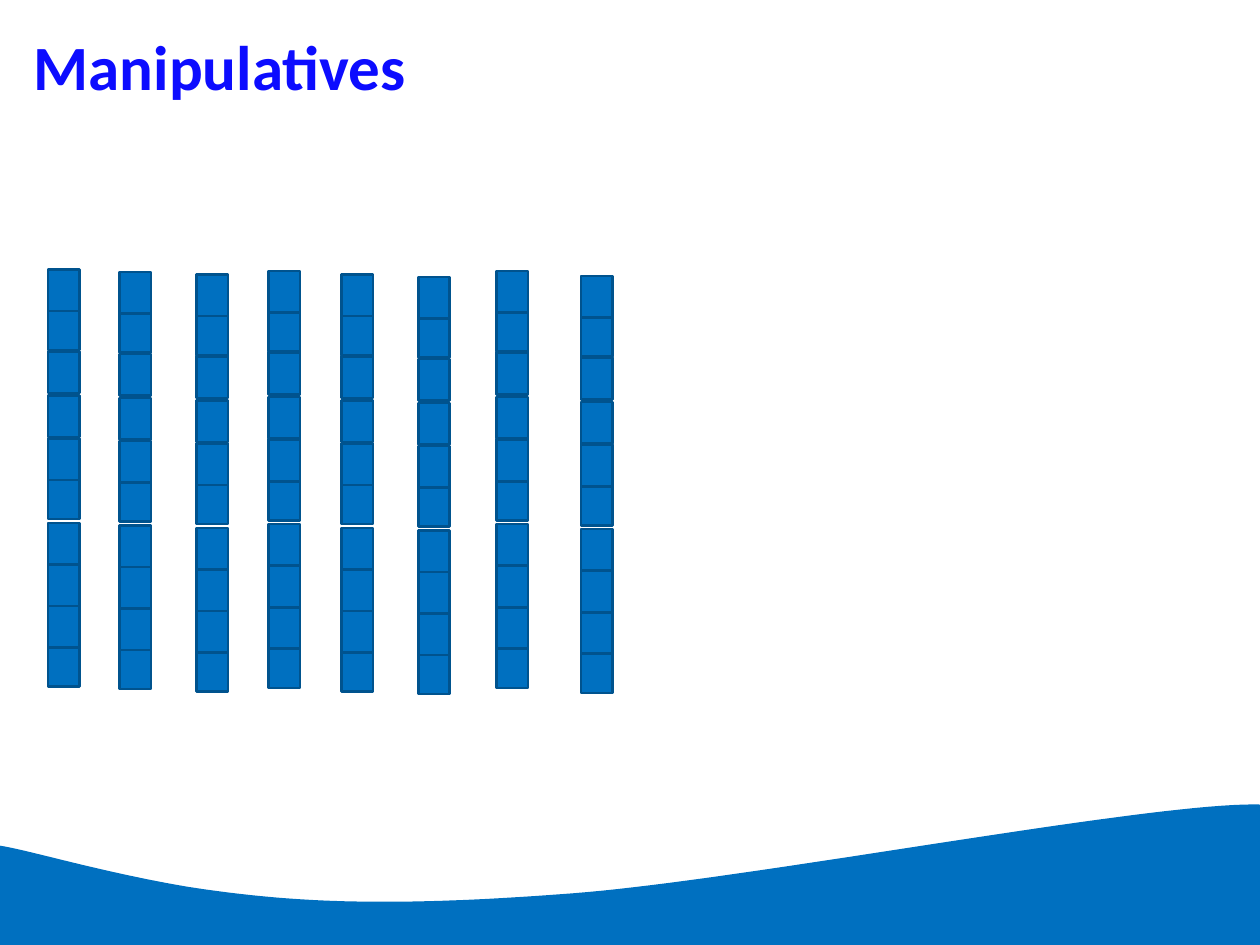
import pptx
import pptx.dml.color
import pptx.enum.shapes
import pptx.enum.text
import pptx.util

Inches = pptx.util.Inches
RGBColor = pptx.dml.color.RGBColor

BLUE = RGBColor(0x00, 0x70, 0xC0)
DARK_BLUE = RGBColor(0x00, 0x53, 0x8E)
TITLE_BLUE = RGBColor(0x0C, 0x0C, 0xFF)

TITLE = "Manipulatives"
# Left and top of each rod of ten cubes
RODS = [(0.38, 2.14), (0.95, 2.16), (1.56, 2.18), (2.13, 2.15),
        (2.71, 2.18), (3.32, 2.20), (3.94, 2.15), (4.61, 2.19)]
# Cube tops below the top of the rod
CUBE_OFFSETS = [0, 0.31, 0.65, 1.0, 1.34, 1.65, 2.01, 2.34, 2.67, 2.98]
CUBE_WIDTH, CUBE_HEIGHT = 0.25, 0.33

WAVE_START = (10.08, 6.39)
# Two control points and an end point for each curve of the crest
WAVE_CURVES = [
    [(9.36, 6.32), (5.98, 6.98), (4.55, 7.09)],
    [(3.12, 7.20), (2.34, 7.17), (1.50, 7.04)],
    [(0.66, 6.90), (-0.08, 6.65), (-0.08, 6.72)],
]
WAVE_BASE = [(-0.08, 7.52), (10.08, 7.55)]
CURVE_STEPS = 40


def bezier_point(points, t):
    weights = ((1 - t) ** 3, 3 * t * (1 - t) ** 2, 3 * t ** 2 * (1 - t), t ** 3)
    return tuple(sum(weight * point[axis] for weight, point in zip(weights, points))
                 for axis in (0, 1))


def add_wave(slide):
    outline = [WAVE_START]
    for curve in WAVE_CURVES:
        points = [outline[-1], *curve]
        outline += [bezier_point(points, step / CURVE_STEPS)
                    for step in range(1, CURVE_STEPS + 1)]
    outline += WAVE_BASE
    vertices = [(Inches(x), Inches(y)) for x, y in outline]
    builder = slide.shapes.build_freeform(*vertices[0])
    builder.add_line_segments(vertices[1:], close=True)
    wave = builder.convert_to_shape()
    wave.shadow.inherit = False
    wave.fill.solid()
    wave.fill.fore_color.rgb = BLUE
    wave.line.fill.background()


def add_title(slide):
    box = slide.shapes.add_textbox(Inches(0.17), Inches(0.17), Inches(9), Inches(0.7))
    frame = box.text_frame
    frame.word_wrap = True
    frame.vertical_anchor = pptx.enum.text.MSO_ANCHOR.MIDDLE
    run = frame.paragraphs[0].add_run()
    run.text = TITLE
    run.font.name = "Calibri"
    run.font.size = pptx.util.Pt(36)
    run.font.bold = True
    run.font.color.rgb = TITLE_BLUE


def add_rod(slide, left, top):
    rod = slide.shapes.add_group_shape()
    for offset in reversed(CUBE_OFFSETS):  # upper cubes overlap lower ones
        cube = rod.shapes.add_shape(
            pptx.enum.shapes.MSO_SHAPE.RECTANGLE,
            Inches(left), Inches(top + offset), Inches(CUBE_WIDTH), Inches(CUBE_HEIGHT))
        cube.shadow.inherit = False
        cube.fill.solid()
        cube.fill.fore_color.rgb = BLUE
        cube.line.color.rgb = DARK_BLUE
        cube.line.width = pptx.util.Pt(1.5)


def main():
    presentation = pptx.Presentation()
    presentation.slide_width = Inches(10)
    presentation.slide_height = Inches(7.5)
    slide = presentation.slides.add_slide(presentation.slide_layouts[6])
    add_wave(slide)
    add_title(slide)
    for left, top in RODS:
        add_rod(slide, left, top)
    presentation.save("out.pptx")


if __name__ == "__main__":
    main()
